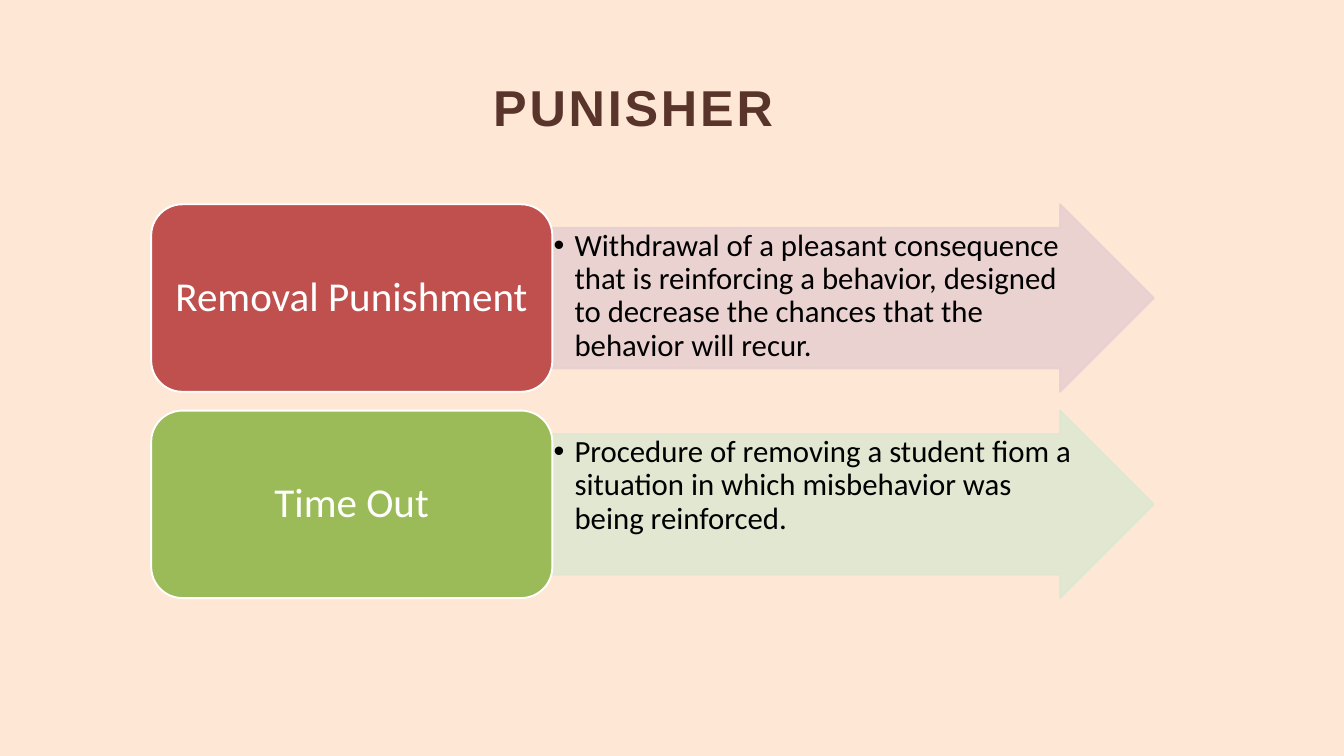
from lxml.etree import SubElement
from pptx import Presentation
from pptx.dml.color import RGBColor
from pptx.enum.shapes import MSO_SHAPE
from pptx.enum.text import MSO_ANCHOR, PP_ALIGN
from pptx.oxml.ns import qn
from pptx.util import Inches, Pt

CREAM = RGBColor(0xFE, 0xE8, 0xD5)
BROWN = RGBColor(0x59, 0x34, 0x2B)
WHITE = RGBColor(0xFF, 0xFF, 0xFF)
BLACK = RGBColor(0x00, 0x00, 0x00)
RED = RGBColor(0xC0, 0x50, 0x4D)
PALE_RED = RGBColor(0xE8, 0xD0, 0xD0)
GREEN = RGBColor(0x9B, 0xBB, 0x59)
PALE_GREEN = RGBColor(0xDE, 0xE7, 0xD1)

SLIDE_WIDTH, SLIDE_HEIGHT = 20, 11.25
TERM_LEFT, TERM_WIDTH = 2.25, 5.97
ARROW_LEFT, ARROW_WIDTH = TERM_LEFT + TERM_WIDTH, 8.95
FIRST_ROW, ROW_HEIGHT, ROW_PITCH = 3.04, 2.79, 3.07
HANGING = Inches(0.31)

TERMS = [
    ("Removal Punishment",
     "Withdrawal of a pleasant consequence that is reinforcing a behavior, "
     "designed to decrease the chances that the behavior will recur.",
     RED, PALE_RED),
    ("Time Out",
     "Procedure of removing a student fiom a situation in which misbehavior "
     "was being reinforced.",
     GREEN, PALE_GREEN),
]


def write(shape, text, font_name, size, color, insets):
    """Fill the shape with one formatted paragraph; insets are left, top, right, bottom."""
    frame = shape.text_frame
    frame.word_wrap = True
    (frame.margin_left, frame.margin_top,
     frame.margin_right, frame.margin_bottom) = map(Inches, insets)
    frame.text = text
    paragraph = frame.paragraphs[0]
    font = paragraph.runs[0].font
    font.name, font.size = font_name, Pt(size)
    font.color.rgb = color
    return paragraph


def add_block(slide, preset, left, top, width, height, fill, line=None):
    block = slide.shapes.add_shape(
        preset, Inches(left), Inches(top), Inches(width), Inches(height))
    block.shadow.inherit = False
    block.fill.solid()
    block.fill.fore_color.rgb = fill
    if line is None:
        block.line.fill.background()
    else:
        block.line.color.rgb = line
        block.line.width = Pt(2)
    return block


def make_translucent(shape, percent):
    for color in shape.fill._xPr.iter(qn("a:srgbClr")):
        SubElement(color, qn("a:alpha"), val=str(percent * 1000))


def add_bullet(paragraph):
    properties = paragraph._p.get_or_add_pPr()
    properties.set("marL", str(HANGING))
    properties.set("indent", str(-HANGING))
    SubElement(properties, qn("a:buFont"), typeface="Arial")
    SubElement(properties, qn("a:buChar"), char="•")


def add_title(slide, text):
    title = slide.shapes.add_textbox(
        Inches(7.33), Inches(1.12), Inches(6.49), Inches(0.92))
    heading = write(title, text, "Arial", 54, BROWN, (0.01, 0.01, 0, 0))
    heading.space_before = Pt(1)
    font = heading.runs[0].font
    font.bold = True
    font._rPr.set("spc", "300")


def add_definition(slide, top, definition, tint):
    arrow = add_block(slide, MSO_SHAPE.RIGHT_ARROW, ARROW_LEFT, top,
                      ARROW_WIDTH, ROW_HEIGHT, tint, tint)
    arrow.adjustments[0], arrow.adjustments[1] = 0.75, 0.5
    make_translucent(arrow, 90)
    body = write(arrow, definition, "Calibri", 33, BLACK, (0.02, 0.03, 0.02, 0.02))
    arrow.text_frame.vertical_anchor = MSO_ANCHOR.TOP
    body.alignment = PP_ALIGN.LEFT
    body.line_spacing = 0.9
    add_bullet(body)


def add_term(slide, top, term, color):
    box = add_block(slide, MSO_SHAPE.ROUNDED_RECTANGLE, TERM_LEFT, top,
                    TERM_WIDTH, ROW_HEIGHT, color, WHITE)
    label = write(box, term, "Calibri", 44, WHITE, (0.18, 0.09, 0.18, 0.09))
    box.text_frame.vertical_anchor = MSO_ANCHOR.MIDDLE
    label.alignment = PP_ALIGN.CENTER
    label.line_spacing = 0.9


def main():
    deck = Presentation()
    deck.slide_width, deck.slide_height = Inches(SLIDE_WIDTH), Inches(SLIDE_HEIGHT)
    slide = deck.slides.add_slide(deck.slide_layouts[6])

    add_block(slide, MSO_SHAPE.RECTANGLE, 0, 0, SLIDE_WIDTH, SLIDE_HEIGHT, CREAM)
    add_title(slide, "PUNISHER")
    for row, (term, definition, color, tint) in enumerate(TERMS):
        top = FIRST_ROW + row * ROW_PITCH
        add_definition(slide, top, definition, tint)
        add_term(slide, top, term, color)
    deck.save("out.pptx")


if __name__ == "__main__":
    main()
